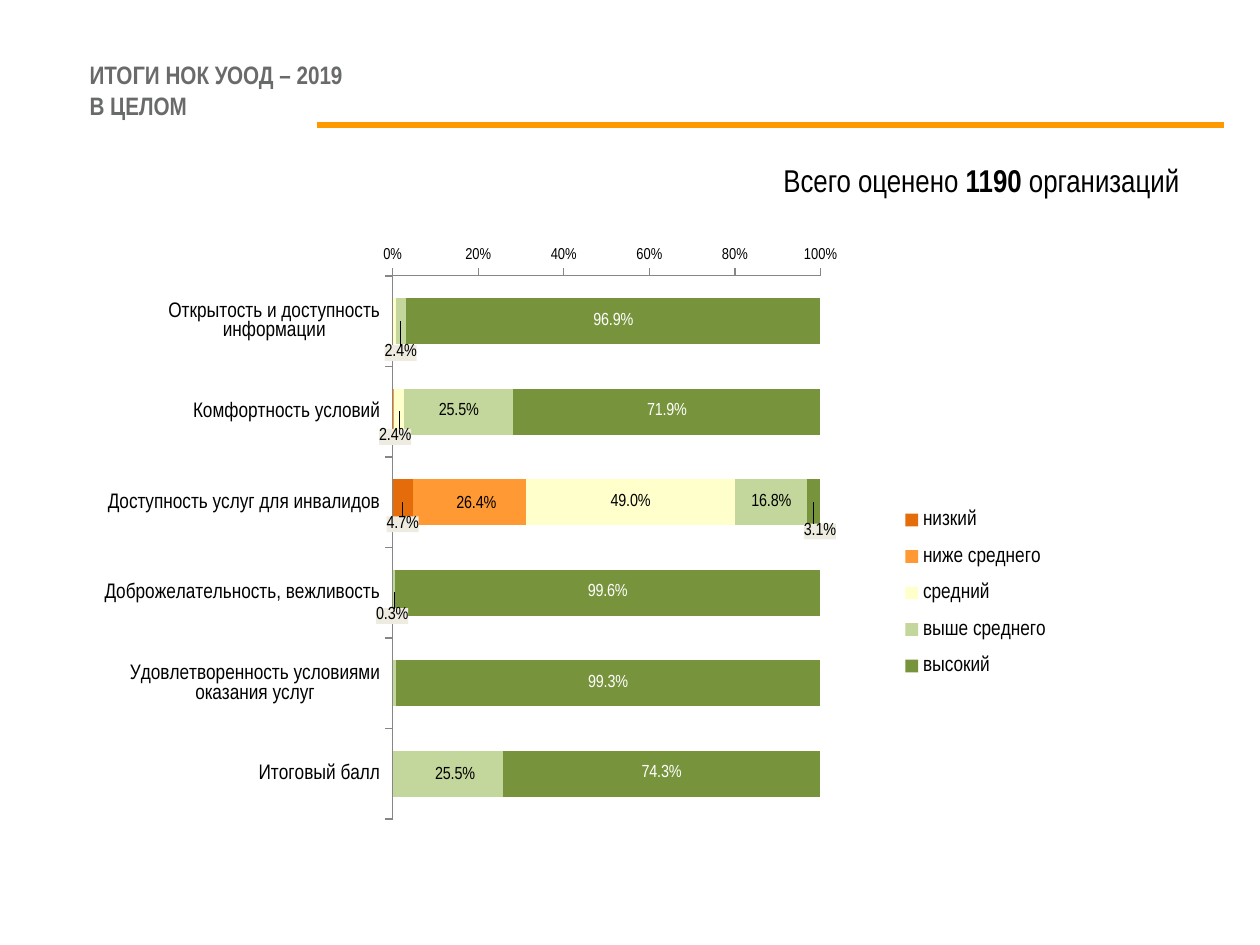
from typing import NamedTuple, Optional

from lxml.etree import SubElement
from pptx import Presentation
from pptx.chart.data import CategoryChartData
from pptx.dml.color import RGBColor
from pptx.enum.chart import XL_AXIS_CROSSES as Crosses
from pptx.enum.chart import XL_CHART_TYPE as ChartType
from pptx.enum.chart import XL_LEGEND_POSITION as LegendPosition
from pptx.enum.chart import XL_TICK_MARK as TickMark
from pptx.enum.shapes import MSO_CONNECTOR as Connector
from pptx.enum.text import MSO_ANCHOR as Anchor
from pptx.enum.text import MSO_AUTO_SIZE as AutoSize
from pptx.enum.text import PP_ALIGN as Align
from pptx.oxml import parse_xml
from pptx.oxml.ns import nsdecls, qn
from pptx.util import Emu, Pt

FONT = "Arial Narrow"
BLACK = RGBColor(0, 0, 0)
WHITE = RGBColor(255, 255, 255)
TITLE_GREY = RGBColor(0x69, 0x6B, 0x6B)
AXIS_GREY = RGBColor(0x86, 0x86, 0x86)
RULE_ORANGE = RGBColor(0xFF, 0x99, 0x00)
LABEL_BEIGE = RGBColor(0xEE, 0xEC, 0xE1)
CHART_W, CHART_H = 1002, 665


class PointLabel(NamedTuple):
    """A label moved by dx, dy px from the middle of its bar part."""
    point: int
    dx: int
    dy: int
    boxed: bool = True


class Level(NamedTuple):
    name: str
    color: RGBColor
    shares: tuple[Optional[float], ...]
    moved: tuple[PointLabel, ...] = ()
    hidden: tuple[int, ...] = ()
    label_color: RGBColor = BLACK


CRITERIA = (
    "Открытость и доступность информации",
    "Комфортность условий",
    "Доступность услуг для инвалидов",
    "Доброжелательность, вежливость",
    "Удовлетворенность условиями оказания услуг",
    "Итоговый балл",
)
LEVELS = (
    Level("низкий", RGBColor(0xE4, 0x6C, 0x0A),
          (0.002, 0.002, 0.047, 0.002, 0.002, 0.002),
          (PointLabel(2, 0, 22),), (0, 1, 3, 4, 5)),
    Level("ниже среднего", RGBColor(0xFF, 0x99, 0x33),
          (None, 0.001, 0.264, None, None, None),
          (PointLabel(2, 7, 2, boxed=False),), (0, 1, 3, 4, 5)),
    Level("средний", RGBColor(0xFF, 0xFF, 0xCC),
          (0.005, 0.024, 0.49, None, None, None),
          (PointLabel(1, -4, 25),), (0, 3, 4, 5)),
    Level("выше среднего", RGBColor(0xC3, 0xD6, 0x9B),
          (0.024, 0.255, 0.168, 0.003, 0.005, 0.255),
          (PointLabel(0, 0, 32), PointLabel(3, -2, 23),
           PointLabel(5, 7, 2, boxed=False)), (4,)),
    Level("высокий", RGBColor(0x77, 0x93, 0x3C),
          (0.969, 0.719, 0.031, 0.996, 0.993, 0.743),
          (PointLabel(2, 6, 29),), label_color=WHITE),
)


def px(length: int) -> Emu:
    return Emu(round(length * 914400 / 126))


def place(shape, left: int, top: int, width: int, height: int) -> None:
    shape.left, shape.top = px(left), px(top)
    shape.width, shape.height = px(width), px(height)


def style_font(font, size: float, color: RGBColor, bold: bool = False) -> None:
    font.name, font.size, font.bold = FONT, Pt(size), bold
    font.color.rgb = color


def add_text(paragraph, text: str, *, size: float, color: RGBColor = BLACK,
             bold: bool = False) -> None:
    for index, line in enumerate(text.split("\n")):
        if index:
            paragraph.add_line_break()
        run = paragraph.add_run()
        run.text = line
        style_font(run.font, size, color, bold)


def manual_layout(x: float, y: float, w: float = 0, h: float = 0,
                  inner: bool = False, edge: bool = True):
    """Layout in fractions of the chart; without edge, x and y are offsets."""
    layout = parse_xml(f"<c:layout {nsdecls('c')}><c:manualLayout/></c:layout>")
    parts = [("layoutTarget", "inner")] if inner else []
    if edge:
        parts += [("xMode", "edge"), ("yMode", "edge")]
    parts += [("x", x), ("y", y)]
    if w:
        parts += [("w", w), ("h", h)]
    for tag, value in parts:
        SubElement(layout[0], qn(f"c:{tag}")).set("val", str(value))
    return layout


def moved_label(label: PointLabel):
    box = (f'<c:spPr><a:solidFill><a:srgbClr val="{LABEL_BEIGE}"/></a:solidFill></c:spPr>'
           if label.boxed else "")
    element = parse_xml(
        f'<c:dLbl {nsdecls("c", "a")}><c:idx val="{label.point}"/>'
        f'<c:numFmt formatCode="0.0%" sourceLinked="0"/>{box}'
        f'<c:txPr><a:bodyPr/><a:p><a:pPr><a:defRPr sz="1000" b="0"><a:solidFill>'
        f'<a:srgbClr val="{BLACK}"/></a:solidFill><a:latin typeface="{FONT}"/>'
        '</a:defRPr></a:pPr><a:endParaRPr lang="ru-RU"/></a:p></c:txPr>'
        '<c:showLegendKey val="0"/><c:showVal val="1"/><c:showCatName val="0"/>'
        '<c:showSerName val="0"/><c:showPercent val="0"/><c:showBubbleSize val="0"/>'
        '</c:dLbl>')
    element.insert(1, manual_layout(round(label.dx / CHART_W, 3),
                                    round(label.dy / CHART_H, 3), edge=False))
    return element


def hidden_label(point: int):
    return parse_xml(f'<c:dLbl {nsdecls("c")}><c:idx val="{point}"/>'
                     '<c:delete val="1"/></c:dLbl>')


def format_level(series, level: Level) -> None:
    series.format.fill.solid()
    series.format.fill.fore_color.rgb = level.color
    labels = series.data_labels
    labels.show_value = True
    labels.number_format, labels.number_format_is_linked = "0.0%", False
    style_font(labels.font, 10, level.label_color)
    special = {label.point: moved_label(label) for label in level.moved}
    special |= {point: hidden_label(point) for point in level.hidden}
    for position, point in enumerate(sorted(special)):
        labels._element.insert(position, special[point])


def format_axis(axis, size: int) -> None:
    axis.has_major_gridlines = False
    axis.major_tick_mark, axis.minor_tick_mark = TickMark.OUTSIDE, TickMark.NONE
    axis.format.line.color.rgb = AXIS_GREY
    axis.format.line.width = Pt(0.75)
    style_font(axis.tick_labels.font, size, BLACK)


def add_rating_chart(slide) -> None:
    data = CategoryChartData(number_format="0.0%")
    data.categories = CRITERIA
    for level in LEVELS:
        data.add_series(level.name, level.shares)
    chart = slide.shapes.add_chart(ChartType.BAR_STACKED, px(74), px(234),
                                   px(CHART_W), px(CHART_H), data).chart
    chart.has_title = False
    style_font(chart.font, 10, BLACK)
    bars = chart.plots[0]
    bars.gap_width, bars.overlap, bars.vary_by_categories = 96, 100, False
    for series, level in zip(bars.series, LEVELS):
        format_level(series, level)

    # Axes: criteria from top to bottom, percent scale below
    criteria, scale = chart.category_axis, chart.value_axis
    format_axis(criteria, 12)
    format_axis(scale, 9)
    criteria.reverse_order = True
    criteria.crosses = Crosses.MAXIMUM
    scale.minimum_scale, scale.maximum_scale, scale.major_unit = 0, 1, 0.2
    scale.tick_labels.number_format = "0%"
    scale.tick_labels.number_format_is_linked = False

    # Legend and plot area positions
    chart.has_legend = True
    legend = chart.legend
    legend.position, legend.include_in_layout = LegendPosition.RIGHT, False
    style_font(legend.font, 12, BLACK)
    legend._element.find(qn("c:legendPos")).addnext(
        manual_layout(0.81, 0.39, 0.18, 0.3))
    plot_area = chart._chartSpace.chart.plotArea
    for old in plot_area.findall(qn("c:layout")):
        plot_area.remove(old)
    plot_area.insert(0, manual_layout(0.318, 0.063, 0.427, 0.817, inner=True))


def main() -> None:
    deck = Presentation()
    deck.slide_width, deck.slide_height = px(1260), px(945)
    slide = deck.slides.add_slide(deck.slide_layouts[5])

    # Title
    title = slide.shapes.title
    place(title, 77, 54, 1134, 72)
    title.text_frame.auto_size = AutoSize.NONE
    title.text_frame.vertical_anchor = Anchor.MIDDLE
    heading = title.text_frame.paragraphs[0]
    heading.alignment = Align.LEFT
    add_text(heading, "ИТОГИ НОК УООД – 2019\nВ ЦЕЛОМ",
             size=14.4, color=TITLE_GREY, bold=True)

    # Rule under the title
    rule = slide.shapes.add_connector(Connector.STRAIGHT, px(317), px(125),
                                      px(1224), px(125))
    rule.line.color.rgb, rule.line.width = RULE_ORANGE, Pt(3)
    SubElement(rule._element.spPr, qn("a:effectLst"))

    add_rating_chart(slide)

    # Total of rated organisations
    total = slide.shapes.add_textbox(px(771), px(155), px(466), px(50)).text_frame
    total.word_wrap = True
    total.auto_size = AutoSize.SHAPE_TO_FIT_TEXT
    for text, bold in (("Всего оценено ", False), ("1190 ", True), ("организаций", False)):
        add_text(total.paragraphs[0], text, size=18, bold=bold)

    deck.save("out.pptx")


if __name__ == "__main__":
    main()
